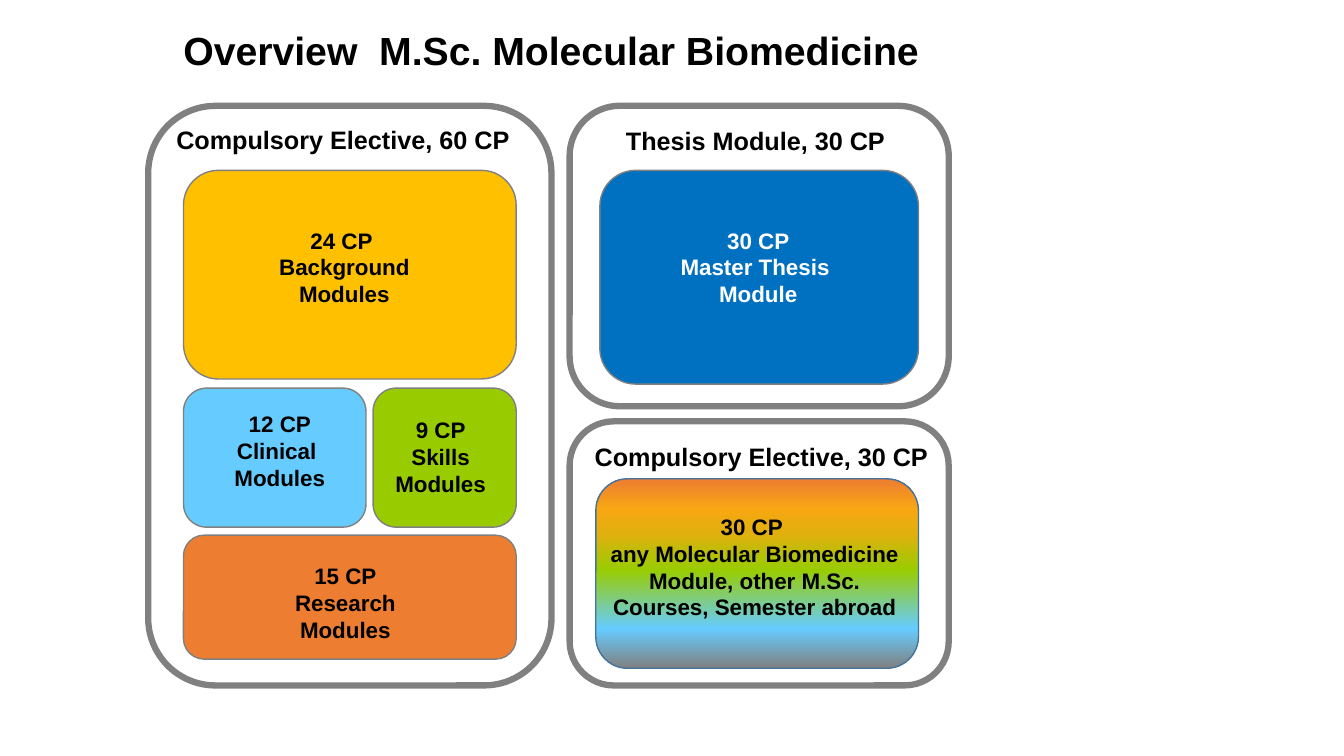
from dataclasses import dataclass

from lxml import etree
from pptx import Presentation
from pptx import util as u
from pptx.dml.color import RGBColor
from pptx.enum import shapes, text
from pptx.oxml import ns


@dataclass(frozen=True)
class Theme:
    font: str = "Arial"
    black: str = "000000"
    white: str = "FFFFFF"
    gray: str = "808080"
    navy: str = "43739E"
    gold: str = "FFC000"
    sky: str = "66CCFF"
    green: str = "99CC00"
    orange: str = "ED7D31"
    blue: str = "0070C0"
    title: int = 28
    head: int = 18
    body: int = 16
    thick: float = 4.5
    thin: float = 1


T = Theme()
# Percent and colour, from the bottom edge up
BLEND = ((0, T.gray), (21, T.sky), (52, T.green), (71, "E1B00E"),
         (84, "F8A712"), (100, T.orange))


@dataclass(frozen=True)
class Area:
    left: float
    top: float
    width: float
    height: float

    def place(self) -> list[int]:
        return [u.Inches(n) for n in (self.left, self.top, self.width, self.height)]


@dataclass(frozen=True)
class Box:
    area: Area
    fill: str | tuple | None = None
    line: str = T.gray
    weight: float = T.thin


@dataclass(frozen=True)
class Label:
    area: Area
    lines: tuple[str, ...]
    size: int = T.body
    color: str = T.black
    center: bool = True
    wrap: bool = True


FRAMES = [Box(Area(*spot), weight=T.thick) for spot in (
    (1.47, 1.05, 4, 5.75), (5.65, 1.05, 3.76, 2.98), (5.65, 4.18, 3.76, 2.62))]

BLOCKS = [
    Box(Area(1.82, 1.69, 3.3, 2.07), T.gold),
    Box(Area(1.82, 3.85, 1.81, 1.38), T.sky),
    Box(Area(3.7, 3.85, 1.42, 1.38), T.green),
    Box(Area(1.82, 5.31, 3.3, 1.23), T.orange),
    Box(Area(5.95, 1.69, 3.16, 2.12), T.blue),
    Box(Area(5.91, 4.75, 3.2, 1.88), BLEND, T.navy),
]

HEADS = [
    Label(Area(1.72, 0.21, 7.69, 0.57), ("Overview  M.Sc. Molecular Biomedicine",),
          T.title, center=False, wrap=False),
    Label(Area(1.65, 1.18, 3.65, 0.4), ("Compulsory Elective, 60 CP",),
          T.head, center=False),
    Label(Area(6.11, 1.19, 2.8, 0.4), ("Thesis Module, 30 CP",),
          T.head, center=False, wrap=False),
    Label(Area(5.8, 4.33, 3.96, 0.71), ("Compulsory Elective, 30 CP",),
          T.head, center=False),
]

NOTES = [
    Label(Area(2.37, 2.2, 2.09, 0.91), ("24 CP ", "Background Modules")),
    Label(Area(1.74, 4.02, 2.07, 0.9), ("12 CP", "Clinical ", "Modules")),
    Label(Area(3.81, 4.08, 1.12, 0.89), ("9 CP", "Skills Modules")),
    Label(Area(2.65, 5.53, 1.55, 0.91), ("15 CP", "Research Modules")),
    Label(Area(6.29, 2.2, 2.46, 0.9), ("30 CP", "Master Thesis ", "Module"),
          color=T.white),
    Label(Area(5.95, 5.04, 3.07, 1.18),
          ("30 CP ", "any Molecular Biomedicine Module, other M.Sc. "
                     "Courses, Semester abroad")),
]


def blend(shape, stops: tuple) -> None:
    """Fill a shape with a gradient that runs upwards."""
    shape.fill.gradient()
    shape.fill.gradient_angle = 90
    group = next(shape.element.iter(ns.qn("a:gsLst")))
    for old in list(group):
        group.remove(old)
    for share, color in stops:
        stop = etree.SubElement(group, ns.qn("a:gs"), pos=str(share * 1000))
        etree.SubElement(stop, ns.qn("a:srgbClr"), val=color)


def draw_box(slide, box: Box) -> None:
    shape = slide.shapes.add_shape(shapes.MSO_SHAPE.ROUNDED_RECTANGLE,
                                   *box.area.place())
    shape.shadow.inherit = False
    shape.line.color.rgb = RGBColor.from_string(box.line)
    shape.line.width = u.Pt(box.weight)
    if box.fill is None:
        shape.fill.background()
    elif isinstance(box.fill, tuple):
        blend(shape, box.fill)
    else:
        shape.fill.solid()
        shape.fill.fore_color.rgb = RGBColor.from_string(box.fill)


def draw_label(slide, label: Label) -> None:
    frame = slide.shapes.add_textbox(*label.area.place()).text_frame
    frame.word_wrap = label.wrap
    frame.auto_size = text.MSO_AUTO_SIZE.SHAPE_TO_FIT_TEXT
    frame.text = "\n".join(label.lines)
    for para in frame.paragraphs:
        para.alignment = text.PP_ALIGN.CENTER if label.center else text.PP_ALIGN.LEFT
        para.font.name = T.font
        para.font.size = u.Pt(label.size)
        para.font.bold = True
        para.font.color.rgb = RGBColor.from_string(label.color)


def main() -> None:
    deck = Presentation()
    deck.slide_width, deck.slide_height = u.Inches(13.33), u.Inches(7.5)
    slide = deck.slides.add_slide(deck.slide_layouts[6])
    # Frames and module blocks
    for box in FRAMES + BLOCKS:
        draw_box(slide, box)
    # Headings and module names
    for label in HEADS + NOTES:
        draw_label(slide, label)
    deck.save("out.pptx")


if __name__ == "__main__":
    main()
